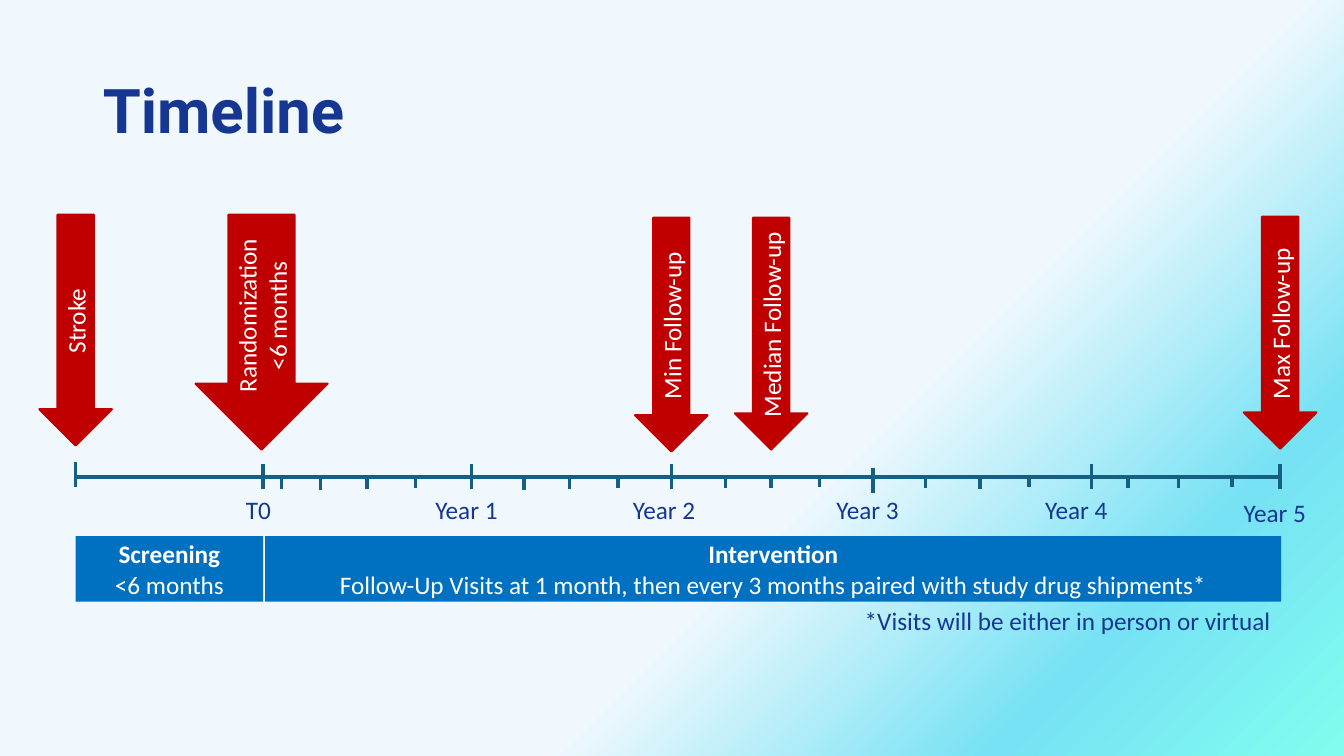
from lxml.etree import SubElement
from pptx import Presentation
from pptx.dml.color import RGBColor
from pptx.enum.shapes import MSO_CONNECTOR, MSO_SHAPE
from pptx.enum.text import MSO_ANCHOR, MSO_AUTO_SIZE, PP_ALIGN
from pptx.oxml import parse_xml
from pptx.oxml.ns import nsdecls, qn
from pptx.util import Inches, Pt


def paint(fill, tone):
    """Give a fill one solid colour from a hex string."""
    fill.solid()
    fill.fore_color.rgb = RGBColor.from_string(tone)


class Board:
    """Hold the style and the slide, on a grid of 100 columns and 100 rows."""

    navy, teal, red, blue, white = "153792", "156082", "C00000", "0070C0", "FFFFFF"
    face, size = "Calibri", 18

    def __init__(self, deck):
        """Add a title-only slide to the deck."""
        self.wide, self.high = deck.slide_width, deck.slide_height
        self.slide = deck.slides.add_slide(deck.slide_layouts[5])
        self.shapes = self.slide.shapes

    def grid(self, x, y, w, h):
        """Turn columns and rows into lengths."""
        return (round(x * self.wide / 100), round(y * self.high / 100),
                round(w * self.wide / 100), round(h * self.high / 100))

    def style(self, para, tone, bold=False, face=face, size=size):
        """Format the runs of a paragraph."""
        for run in para.runs:
            font = run.font
            font.name, font.size, font.bold = face, Pt(size), bold
            paint(font.fill, tone)

    def back(self, stops):
        """Fill the background with a gradient that starts at the top left."""
        marks = "".join(
            f'<a:gs pos="{pos * 1000}"><a:srgbClr val="{tone}"/></a:gs>'
            for pos, tone in stops)
        node = parse_xml(
            f'<p:bg {nsdecls("p", "a")}><p:bgPr><a:gradFill rotWithShape="1">'
            f'<a:gsLst>{marks}</a:gsLst><a:path path="circle">'
            '<a:fillToRect r="100000" b="100000"/></a:path></a:gradFill>'
            '<a:effectLst/></p:bgPr></p:bg>')
        self.slide.element.cSld.insert(0, node)

    def title(self, text, *cell):
        """Place and format the title."""
        box = self.shapes.title
        box.left, box.top, box.width, box.height = self.grid(*cell)
        frame = box.text_frame
        frame.text = text
        frame.vertical_anchor = MSO_ANCHOR.MIDDLE
        para = frame.paragraphs[0]
        para.alignment, para.line_spacing = PP_ALIGN.LEFT, 0.9
        self.style(para, self.navy, True, "Roboto", 44)

    def rule(self, x, y, w, h):
        """Draw a straight line that spans w columns and h rows."""
        left, top, wide, high = self.grid(x, y, w, h)
        line = self.shapes.add_connector(
            MSO_CONNECTOR.STRAIGHT, left, top, left + wide, top + high)
        line.line.width = Pt(2.5)
        paint(line.line.fill, self.teal)
        SubElement(line.element.spPr, qn("a:effectLst"))

    def label(self, text, *cell, wrap=False):
        """Add a plain text box."""
        frame = self.shapes.add_textbox(*self.grid(*cell)).text_frame
        frame.text = text
        frame.word_wrap = wrap
        frame.auto_size = MSO_AUTO_SIZE.SHAPE_TO_FIT_TEXT
        self.style(frame.paragraphs[0], self.navy)

    def block(self, kind, tone, text, cell, lead=False):
        """Add a filled shape with centred white text."""
        shape = self.shapes.add_shape(kind, *self.grid(*cell))
        shape.shadow.inherit = False
        paint(shape.fill, tone)
        frame = shape.text_frame
        frame.text = text
        frame.word_wrap = True
        frame.vertical_anchor = MSO_ANCHOR.MIDDLE
        for spot, para in enumerate(frame.paragraphs):
            para.alignment = PP_ALIGN.CENTER
            self.style(para, self.white, lead and spot == 0)
        return shape

    def arrow(self, text, *cell):
        """Add a red down arrow with text that reads upwards."""
        shape = self.block(MSO_SHAPE.DOWN_ARROW, self.red, text, cell)
        shape.line.width = Pt(1.5)
        paint(shape.line.fill, self.red)
        shape.text_frame._txBody.bodyPr.set("vert", "vert270")

    def phase(self, text, *cell):
        """Add a blue bar with a bold first line."""
        bar = self.block(MSO_SHAPE.RECTANGLE, self.blue, text, cell, True)
        bar.line.fill.background()


def main():
    """Build the timeline slide."""
    deck = Presentation()
    deck.slide_width, deck.slide_height = Inches(13.33), Inches(7.5)
    board = Board(deck)
    board.back([(0, "F0F8FD"), (62, "F0F8FD"), (83, "76E2F4"), (100, "80FDEE")])
    board.title("Timeline", 6.9, 5.33, 86.25, 19.33)

    board.rule(5.63, 63.07, 89.62, 0)
    ticks = [
        (61.07, 3.33, [5.63]),
        (61.33, 3.33, [19.58, 35.1, 49.95, 81.23, 95.25]),
        (61.87, 3.33, [64.95]),
        (62.8, 1.6, [76.58, 91.65]),
        (62.93, 1.6, [30.9, 45.98, 68.85, 83.93]),
        (63.07, 1.6, [20.93, 27.3, 42.38]),
        (63.07, 1.73, [23.85, 39]),
        (63.2, 1.33, [54, 57.38, 87.68]),
        (63.2, 1.2, [60.98]),
        (63.33, 1.33, [72.9]),
    ]
    for top, high, spots in ticks:
        for spot in spots:
            board.rule(spot, top, 0, high)

    board.label("T0", 17.55, 64.67, 3.75, 5.33, wrap=True)
    years = [(31.65, 64.67), (46.35, 64.67), (61.5, 64.67), (77.03, 64.67), (91.8, 65.07)]
    for year, (left, top) in enumerate(years, 1):
        board.label(f"Year {year}", left, top, 6.45, 5.33)

    events = [
        ("Stroke", 2.93, 28.4, 5.4, 30.53),
        ("Randomization\n<6 months", 14.55, 28.4, 9.83, 31.07),
        ("Min Follow-up", 47.25, 28.8, 5.4, 30.93),
        ("Median Follow-up", 54.68, 28.8, 5.4, 30.67),
        ("Max Follow-up", 92.55, 28.67, 5.4, 30.67),
    ]
    for event in events:
        board.arrow(*event)

    board.phase("Screening\n<6 months", 5.63, 70.93, 13.95, 8.67)
    board.phase("Intervention\nFollow-Up Visits at 1 month, then every 3 months "
                "paired with study drug shipments*", 19.73, 70.93, 75.6, 8.67)
    board.label("*Visits will be either in person or virtual", 63.6, 79.47, 32.4, 5.33)
    deck.save("out.pptx")


if __name__ == "__main__":
    main()
